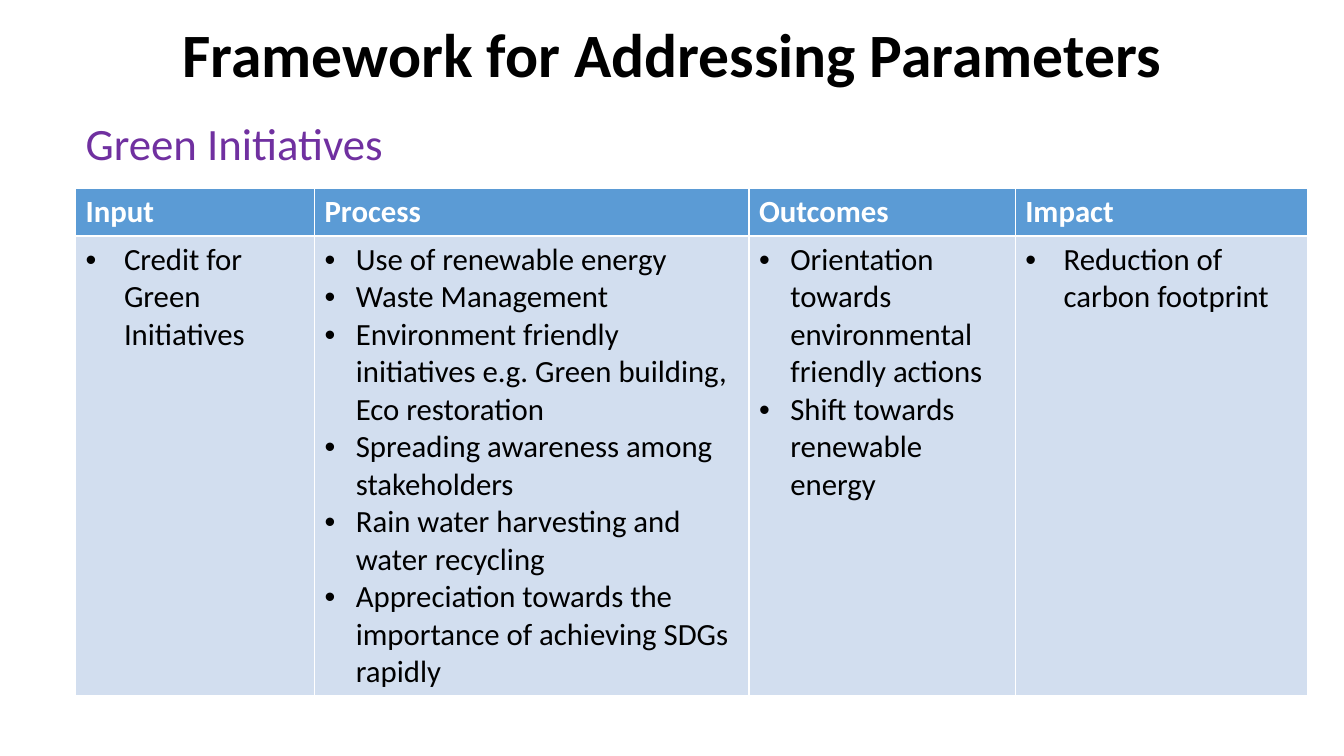
"""Build the Green Initiatives slide of the parameter framework."""
from lxml.etree import SubElement
from pptx import Presentation
from pptx.dml.color import RGBColor
from pptx.enum.text import MSO_ANCHOR, PP_ALIGN
from pptx.oxml.ns import qn
from pptx.util import Inches, Pt

BLACK = RGBColor(0x00, 0x00, 0x00)
WHITE = RGBColor(0xFF, 0xFF, 0xFF)
PURPLE = RGBColor(0x70, 0x30, 0xA0)
HEADER_BLUE = RGBColor(0x5B, 0x9B, 0xD5)
PALE_BLUE = RGBColor(0xD2, 0xDE, 0xEF)

COLUMNS = [
    ("Input", 2.37, 0.38, ["Credit for Green Initiatives"]),
    ("Process", 4.31, 0.31, [
        "Use of renewable energy",
        "Waste Management",
        "Environment friendly initiatives e.g. Green building, Eco restoration",
        "Spreading awareness among stakeholders",
        "Rain water harvesting and water recycling",
        "Appreciation towards the importance of achieving SDGs rapidly",
    ]),
    ("Outcomes", 2.64, 0.31, [
        "Orientation towards environmental friendly actions",
        "Shift towards renewable energy",
    ]),
    ("Impact", 2.9, 0.38, ["Reduction of carbon footprint"]),
]
ROW_HEIGHTS = [0.46, 4.51]


def style_font(para, size, color, bold=False):
    para.font.name = "Calibri"
    para.font.size = Pt(size)
    para.font.bold = bold
    para.font.color.rgb = color


def add_bullet(para, indent):
    properties = para._p.get_or_add_pPr()
    properties.set("marL", str(Inches(indent)))
    properties.set("indent", str(-Inches(indent)))
    SubElement(properties, qn("a:buFont")).set("typeface", "Arial")
    SubElement(properties, qn("a:buChar")).set("char", "•")


deck = Presentation()
deck.slide_width, deck.slide_height = Inches(13.33), Inches(7.5)
page = deck.slides.add_slide(deck.slide_layouts[5])

title = page.shapes.title
title.left, title.top = Inches(0.92), Inches(0.17)
title.width, title.height = Inches(11.5), Inches(0.8)
title.text_frame.text = "Framework for Addressing Parameters"
title.text_frame.vertical_anchor = MSO_ANCHOR.MIDDLE
para = title.text_frame.paragraphs[0]
para.alignment = PP_ALIGN.CENTER
para.line_spacing = 0.9
style_font(para, 44, BLACK, bold=True)

table = page.shapes.add_table(
    2, len(COLUMNS), Inches(0.75), Inches(1.87), Inches(12.22), Inches(sum(ROW_HEIGHTS))
).table
for row, height in zip(table.rows, ROW_HEIGHTS):
    row.height = Inches(height)

for index, (heading, width, indent, points) in enumerate(COLUMNS):
    table.columns[index].width = Inches(width)
    header, body = table.cell(0, index), table.cell(1, index)
    for cell, fill in ((header, HEADER_BLUE), (body, PALE_BLUE)):
        cell.fill.solid()
        cell.fill.fore_color.rgb = fill
    header.text = heading
    style_font(header.text_frame.paragraphs[0], 22, WHITE, bold=True)
    body.text = "\n".join(points)
    for para in body.text_frame.paragraphs:
        add_bullet(para, indent)
        style_font(para, 22, BLACK)

subtitle = page.shapes.add_textbox(Inches(0.75), Inches(1.1), Inches(6.6), Inches(0.64))
subtitle.text_frame.word_wrap = True
subtitle.text_frame.text = "Green Initiatives"
style_font(subtitle.text_frame.paragraphs[0], 32, PURPLE)

deck.save("out.pptx")
